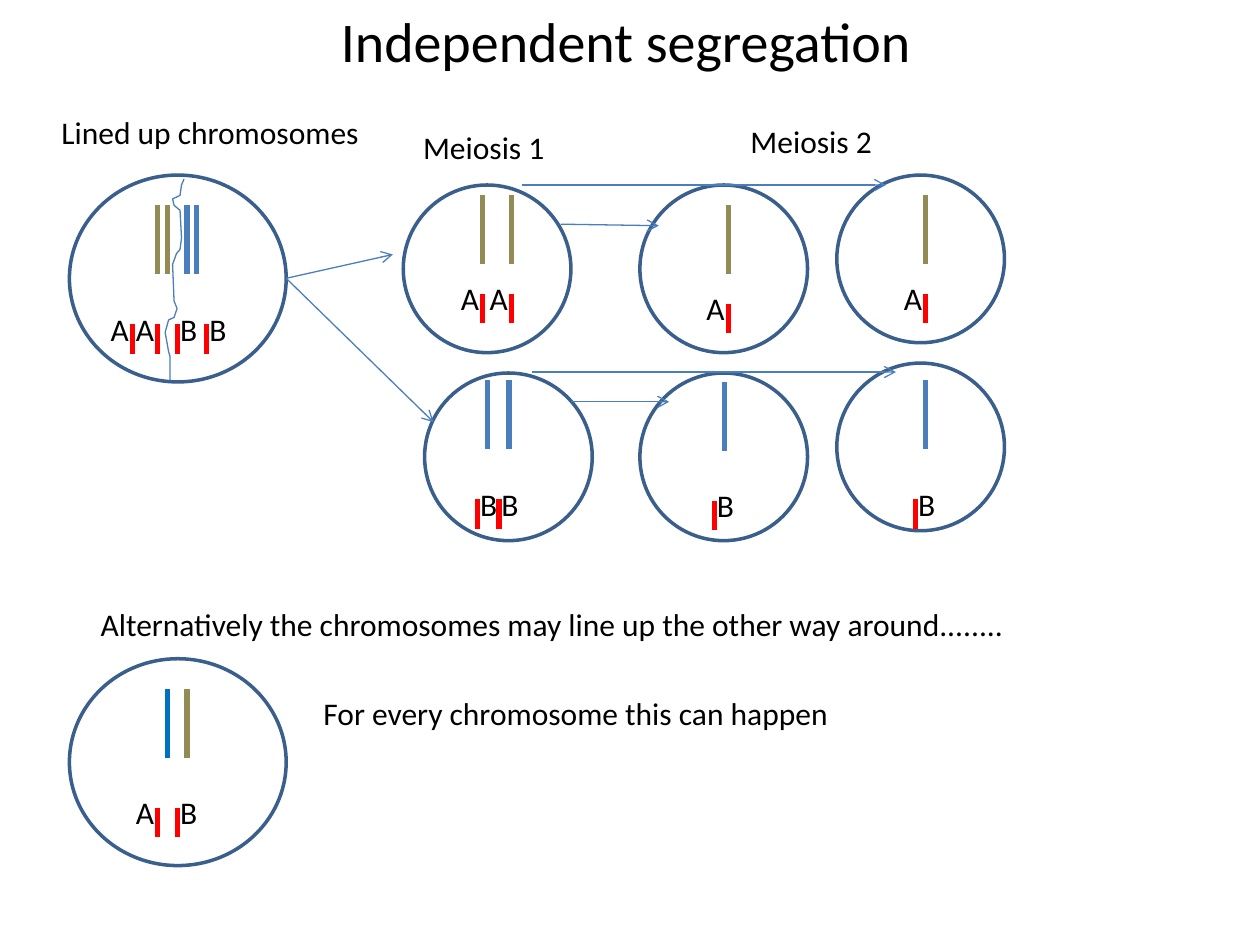
"""Draw how paired chromosomes segregate independently in meiosis."""
from dataclasses import dataclass

from lxml.etree import SubElement as Sub
from pptx import Presentation
from pptx.dml.color import RGBColor as Rgb
from pptx.enum.shapes import MSO_CONNECTOR as Link, MSO_SHAPE as Kind
from pptx.enum.text import MSO_ANCHOR as Anchor, MSO_AUTO_SIZE as Fit, PP_ALIGN as Align
from pptx.oxml.ns import qn
from pptx.util import Cm, Pt


@dataclass(frozen=True)
class Theme:
    font: str = "Calibri"
    ink: str = "000000"
    rim: str = "3A5F8C"
    tan: str = "948A54"
    blue: str = "4B7EBC"
    bright: str = "0070C0"
    red: str = "FF0000"
    title: float = 32
    body: float = 18
    thin: float = 0.75
    edge: float = 2
    bold: float = 3


LOOK = Theme()


def paint(line, tint, width):
    line.color.rgb = Rgb.from_string(tint)
    line.width = Pt(width)


def label(shapes, text, x, y, w, h=1.02, size=LOOK.body):
    box = shapes.add_textbox(Cm(x), Cm(y), Cm(w), Cm(h))
    frame = box.text_frame
    frame.word_wrap = False
    frame.auto_size = Fit.SHAPE_TO_FIT_TEXT
    para = frame.paragraphs[0]
    para.text = text
    para.font.name = LOOK.font
    para.font.size = Pt(size)
    para.font.color.rgb = Rgb.from_string(LOOK.ink)
    return frame


def title(shapes, text):
    frame = label(shapes, text, 1.19, -0.79, 22.86, 3.18, LOOK.title)
    frame.word_wrap = True
    frame.auto_size = Fit.NONE
    frame.vertical_anchor = Anchor.MIDDLE
    frame.paragraphs[0].alignment = Align.CENTER


def cell(shapes, x, y, w=3.38, h=3.38):
    oval = shapes.add_shape(Kind.OVAL, Cm(x), Cm(y), Cm(w), Cm(h))
    oval.shadow.inherit = False
    oval.fill.background()
    paint(oval.line, LOOK.rim, LOOK.edge)


def stroke(shapes, start, end, tint, width):
    line = shapes.add_connector(Link.STRAIGHT, *map(Cm, start + end))
    paint(line.line, tint, width)
    Sub(line._element.spPr, qn("a:effectLst"))
    return line


def arrow(shapes, start, end):
    line = stroke(shapes, start, end, LOOK.blue, LOOK.thin)
    Sub(line.line._get_or_add_ln(), qn("a:tailEnd"), type="arrow")


def strand(shapes, x, y, tint):
    stroke(shapes, (x, y), (x, y + 1.39), tint, LOOK.bold)


def gene(shapes, name, x, y):
    group = shapes.add_group_shape().shapes
    stroke(group, (x, y), (x, y + 0.6), LOOK.red, LOOK.bold)
    shift = {"A": 0.69, "B": 0.2}[name]
    label(group, name, x - shift, y - 0.41, 0.89)


def divide(shapes, points):
    spots = [(Cm(x), Cm(y)) for x, y in points]
    pen = shapes.build_freeform(*spots[0])
    pen.add_line_segments(spots[1:], close=False)
    curve = pen.convert_to_shape()
    curve.shadow.inherit = False
    curve.fill.background()
    paint(curve.line, LOOK.blue, LOOK.thin)


def parent(shapes, y, strands, genes):
    cell(shapes, 1.4, y, 4.37, 4.17)
    for x, tint in strands:
        strand(shapes, x, y + 0.61, tint)
    for name, x in genes:
        gene(shapes, name, x, y + 3)


def child(shapes, name, spot, columns, y):
    cell(shapes, *spot)
    tint, shift, drop = {"A": (LOOK.tan, 0, 1.98), "B": (LOOK.blue, 0.2, 2.39)}[name]
    for x in columns:
        strand(shapes, x, y, tint)
        gene(shapes, name, x - shift, y + drop)


def main():
    deck = Presentation()
    deck.slide_width, deck.slide_height = Cm(25.4), Cm(19.05)
    shapes = deck.slides.add_slide(deck.slide_layouts[6]).shapes

    parent(shapes, 3.53,
           [(3.18, LOOK.tan), (3.38, LOOK.tan), (3.77, LOOK.blue), (3.96, LOOK.blue)],
           [("A", 2.67), ("A", 3.18), ("B", 3.58), ("B", 4.17)])
    parent(shapes, 13.28, [(3.38, LOOK.bright), (3.77, LOOK.tan)],
           [("A", 3.18), ("B", 3.58)])

    for name, spot, columns, y in [
        ("A", (8.13, 3.73), (9.73, 10.31), 3.94),
        ("A", (12.9, 3.73), (14.68,), 4.14),
        ("A", (16.87, 3.53), (18.66,), 3.94),
        ("B", (8.56, 7.52), (9.83, 10.26), 7.67),
        ("B", (12.9, 7.52), (14.6,), 7.7),
        ("B", (16.87, 7.32), (18.66,), 7.67),
    ]:
        child(shapes, name, spot, columns, y)

    divide(shapes, [
        (3.71, 3.61), (3.66, 3.73), (3.63, 3.94), (3.48, 4.01), (3.51, 4.14),
        (3.63, 4.24), (3.66, 4.8), (3.63, 5.03), (3.56, 5.11), (3.48, 5.33),
        (3.51, 6.07), (3.57, 6.22), (3.51, 6.4), (3.4, 6.45), (3.33, 6.7),
        (3.4, 7.09), (3.43, 7.19), (3.43, 7.67),
    ])
    for start, end in [
        ((5.77, 5.61), (7.92, 5.13)),
        ((5.77, 5.61), (8.74, 8.51)),
        ((11.3, 4.52), (13.28, 4.55)),
        ((10.52, 3.73), (17.86, 3.73)),
        ((11.51, 8.1), (13.49, 8.1)),
        ((10.72, 7.5), (18.06, 7.5)),
    ]:
        arrow(shapes, start, end)

    for text, x, y, w in [
        ("Lined up chromosomes", 0.99, 2.16, 6.58),
        ("Meiosis 1", 8.28, 2.46, 2.97),
        ("Meiosis 2", 14.88, 2.34, 2.97),
        ("Alternatively the chromosomes may line up the other way around........",
         1.78, 12.07, 18.92),
        ("For every chromosome this can happen", 6.27, 13.87, 11.13),
    ]:
        label(shapes, text, x, y, w)
    title(shapes, "Independent segregation")
    deck.save("out.pptx")


if __name__ == "__main__":
    main()
